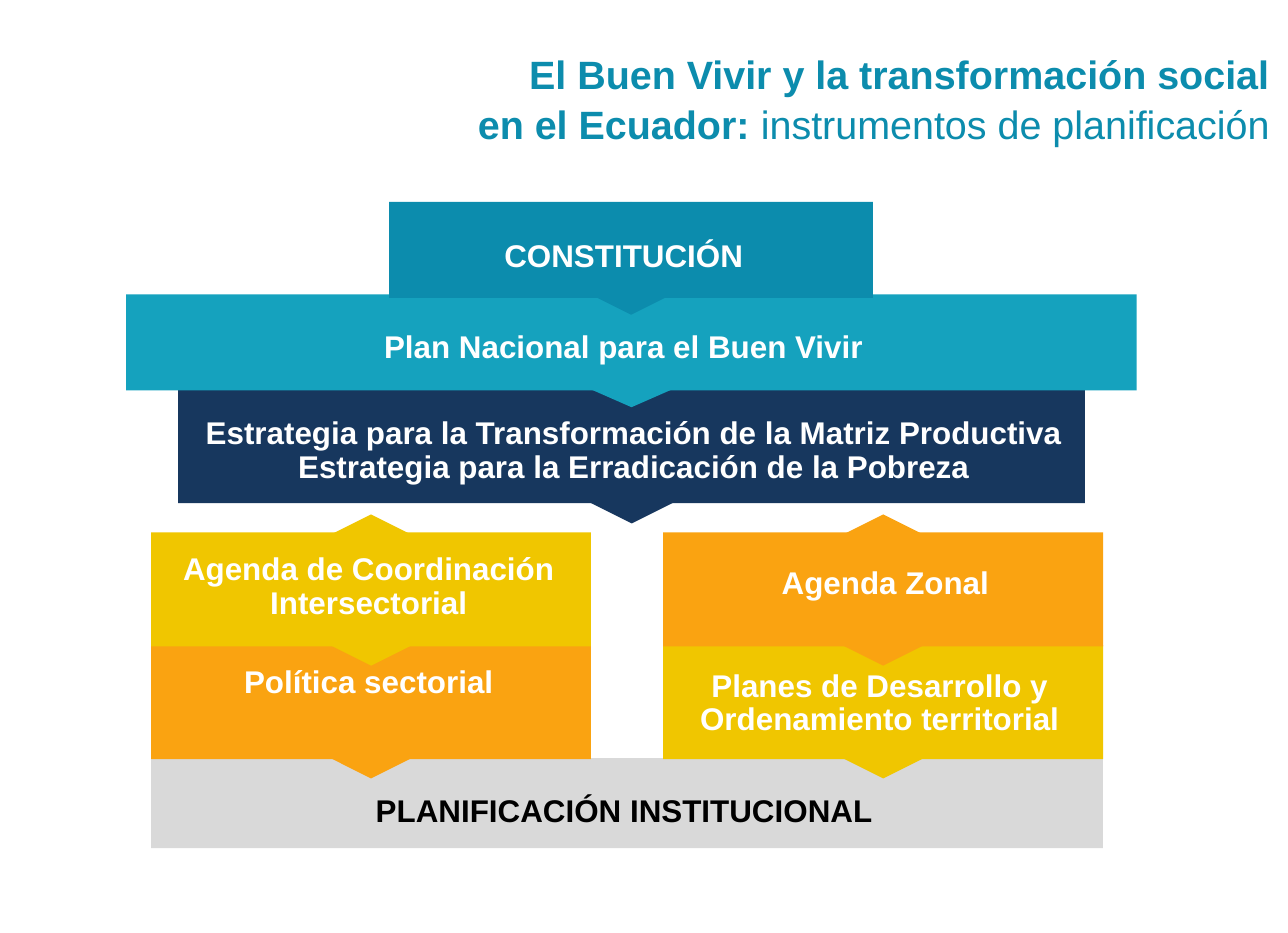
from dataclasses import dataclass

from pptx import Presentation
from pptx.dml.color import RGBColor
from pptx.enum.shapes import MSO_SHAPE as Shape
from pptx.enum.text import MSO_ANCHOR as Anchor, MSO_AUTO_SIZE as AutoSize, PP_ALIGN as Align
from pptx.util import Pt

FONT = "Arial"
TEAL, CYAN, NAVY = "0C8CAD", "15A2BE", "17375E"
ORANGE, YELLOW, GREY = "FAA311", "F0C600", "D9D9D9"
WHITE, BLACK = "FFFFFF", "000000"
LEFT_COL, RIGHT_COL, COL_W = 96.5, 423.4, 280.8
AGENDA_Y, POLICY_Y, ROW_H = 339.8, 411.8, 72.7


@dataclass
class Point:
    """Hexagon centred across a band, its tips reaching past the edges."""
    cy: float
    length: float
    width: float = 53.3


@dataclass
class Label:
    x: float
    y: float
    w: float
    lines: tuple[str, ...]
    h: float = 29.5
    color: str = WHITE


@dataclass
class Band:
    x: float
    y: float
    w: float
    h: float
    color: str
    label: Label
    point: Point | None = None


# Bands, from back to front
BANDS = [
    Band(LEFT_COL, 483.8, 607.7, 57.6, GREY,
         Label(205.9, 504, 385.2, ("PLANIFICACIÓN INSTITUCIONAL",), color=BLACK)),
    Band(113.8, 248.4, 578.9, ROW_H, NAVY,
         Label(113.8, 262.8, 581.8,
               ("Estrategia para la Transformación de la Matriz Productiva",
                "Estrategia para la Erradicación de la Pobreza"), 51),
         Point(298.1, 72)),
    Band(80.6, 187.9, 645.1, 61.2, CYAN,
         Label(180, 208.1, 436.3, ("Plan Nacional para el Buen Vivir",)),
         Point(223.9, 72, 82.1)),
    Band(248.4, 128.9, 308.9, 61.2, TEAL,
         Label(308.2, 149.8, 180, ("CONSTITUCIÓN",)),
         Point(164.9, 72)),
    Band(LEFT_COL, POLICY_Y, COL_W, ROW_H, ORANGE,
         Label(93.6, 421.9, 283.7, ("Política sectorial",)),
         Point(459.4, 74.9)),
    Band(RIGHT_COL, POLICY_Y, COL_W, ROW_H, YELLOW,
         Label(419.8, 424.1, 283.7, ("Planes de Desarrollo y Ordenamiento territorial",), 51),
         Point(459.4, 74.9)),
    Band(RIGHT_COL, AGENDA_Y, COL_W, ROW_H, ORANGE,
         Label(423.4, 358.6, 283.7, ("Agenda Zonal",)),
         Point(376.6, 96.5)),
    Band(LEFT_COL, AGENDA_Y, COL_W, ROW_H, YELLOW,
         Label(93.6, 349.9, 283.7, ("Agenda de Coordinación Intersectorial",), 51),
         Point(376.6, 96.5)),
]


def rgb(color: str) -> RGBColor:
    return RGBColor.from_string(color)


def add_run(p, text: str, size: float, color: str, bold: bool = True) -> None:
    r = p.add_run()
    r.text = text
    r.font.name = FONT
    r.font.size = Pt(size)
    r.font.bold = bold
    r.font.color.rgb = rgb(color)


def add_solid(shapes, kind: Shape, x: float, y: float, w: float, h: float, color: str):
    sp = shapes.add_shape(kind, Pt(x), Pt(y), Pt(w), Pt(h))
    sp.shadow.inherit = False
    sp.fill.solid()
    sp.fill.fore_color.rgb = rgb(color)
    sp.line.fill.background()
    return sp


def add_label(s, label: Label) -> None:
    tf = s.shapes.add_textbox(Pt(label.x), Pt(label.y), Pt(label.w), Pt(label.h)).text_frame
    tf.word_wrap = True
    tf.auto_size = AutoSize.SHAPE_TO_FIT_TEXT
    for i, line in enumerate(label.lines):
        p = tf.add_paragraph() if i else tf.paragraphs[0]
        p.alignment = Align.CENTER
        p.line_spacing = 0.9
        add_run(p, line, 20, label.color)


def add_band(s, band: Band) -> None:
    shapes = s.shapes
    if band.point:
        shapes = s.shapes.add_group_shape().shapes
        pt = band.point
        sp = add_solid(shapes, Shape.HEXAGON, band.x + (band.w - pt.length) / 2,
                       pt.cy - pt.width / 2, pt.length, pt.width, band.color)
        sp.rotation = 90
    add_solid(shapes, Shape.RECTANGLE, band.x, band.y, band.w, band.h, band.color)
    add_label(s, band.label)


def add_title(s) -> None:
    sp = s.shapes.title
    sp.left, sp.top, sp.width, sp.height = Pt(296.6), Pt(23.8), Pt(521.3), Pt(77)
    tf = sp.text_frame
    tf.word_wrap = True
    tf.auto_size = AutoSize.NONE
    tf.vertical_anchor = Anchor.MIDDLE
    p = tf.paragraphs[0]
    p.alignment = Align.RIGHT
    p.line_spacing = 1.06
    add_run(p, "El Buen Vivir y la transformación social en el Ecuador: ", 25.2, TEAL)
    add_run(p, "instrumentos de planificación", 25.2, TEAL, bold=False)


def main() -> None:
    prs = Presentation()
    prs.slide_width, prs.slide_height = Pt(822.24), Pt(595.44)
    s = prs.slides.add_slide(prs.slide_layouts[5])
    add_title(s)
    for band in BANDS:
        add_band(s, band)
    prs.save("out.pptx")


if __name__ == "__main__":
    main()
